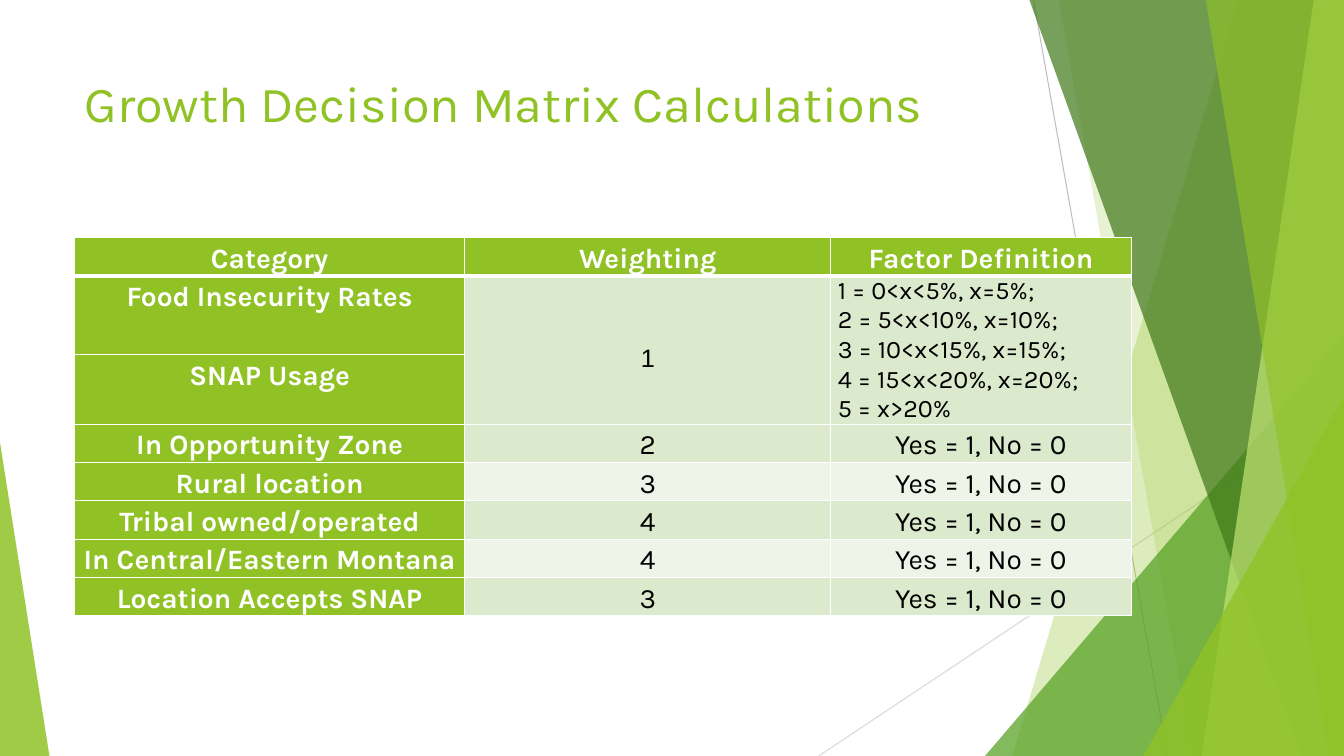
"""Build the growth decision matrix slide with its faceted green backdrop."""
from dataclasses import dataclass

from lxml import etree
from pptx import Presentation
from pptx.dml.color import RGBColor
from pptx.enum.shapes import MSO_CONNECTOR, MSO_SHAPE
from pptx.enum.text import MSO_ANCHOR, PP_ALIGN
from pptx.oxml.ns import qn
from pptx.util import Pt

PX = 9144
WIDTH, HEIGHT = 1333, 750
STRAIGHT = MSO_CONNECTOR.STRAIGHT
TRIANGLE = MSO_SHAPE.ISOSCELES_TRIANGLE
LEFT, CENTER = PP_ALIGN.LEFT, PP_ALIGN.CENTER
TOP, MIDDLE = MSO_ANCHOR.TOP, MSO_ANCHOR.MIDDLE


@dataclass(frozen=True)
class Theme:
    green: str = "90C226"
    leaf: str = "54A021"
    forest: str = "3F7819"
    lime: str = "C0E474"
    band_dark: str = "DBE9CD"
    band_light: str = "EEF4E8"
    white: str = "FFFFFF"
    black: str = "000000"
    line_dark: str = "BFBFBF"
    line_light: str = "D9D9D9"
    font: str = "Karla"
    plain_font: str = "Arial"
    title_size: int = 36
    table_size: int = 20
    detail_size: int = 18
    hairline: float = 0.75
    border: int = 1
    header_border: int = 3


THEME = Theme()


@dataclass(frozen=True)
class Ray:
    start: tuple[int, int]
    end: tuple[int, int]
    color: str


@dataclass(frozen=True)
class Facet:
    top_left: int
    bottom_left: int
    color: str
    opacity: int


@dataclass(frozen=True)
class Wedge:
    left: int
    top: int
    width: int
    apex: int
    color: str
    opacity: int


@dataclass(frozen=True)
class TextStyle:
    color: str = THEME.black
    size: int = THEME.table_size
    font: str = THEME.font
    bold: bool = False
    align: PP_ALIGN = CENTER
    spacing: float = 1.15


LABEL = TextStyle(color=THEME.white, bold=True)
VALUE = TextStyle()
SHARED_WEIGHT = TextStyle(size=THEME.detail_size, font=THEME.plain_font)
RANGES = TextStyle(size=THEME.detail_size, align=LEFT, spacing=1.0)

RAYS = [
    Ray((1025, 0), (1158, HEIGHT), THEME.line_dark),
    Ray((WIDTH, 403), (812, HEIGHT), THEME.line_light),
]
BACKDROP = [
    Facet(1228, 1004, THEME.green, 30),
    Facet(1050, 1183, THEME.green, 20),
    Wedge(977, 333, 356, 1, THEME.leaf, 72),
    Facet(1021, 1291, THEME.forest, 70),
    Facet(1303, 1192, THEME.lime, 70),
    Facet(1196, 1318, THEME.green, 65),
    Wedge(1134, 393, 199, 1, THEME.green, 80),
    Wedge(0, 439, 49, 0, THEME.green, 85),
]

TABLE_LEFT, TABLE_TOP = 74, 236
COLUMN_WIDTHS = [387, 363, 298]
ROW_HEIGHTS = [38, 78, 69] + [38] * 5
YES_NO = "Yes = 1, No = 0"
FACTOR_RANGES = """1 = 0<x<5%, x=5%;
2 = 5<x<10%, x=10%;
3 = 10<x<15%, x=15%;
4 = 15<x<20%, x=20%;
5 = x>20%"""
ROWS = [
    ("Category", "Weighting", "Factor Definition"),
    ("Food Insecurity Rates", "1", FACTOR_RANGES),
    ("SNAP Usage", "", ""),
    ("In Opportunity Zone", "2", YES_NO),
    ("Rural location", "3", YES_NO),
    ("Tribal owned/operated", "4", YES_NO),
    ("In Central/Eastern Montana", "4", YES_NO),
    ("Location Accepts SNAP", "3", YES_NO),
]


def paint(shape, color: str, opacity: int) -> None:
    """Give a shape a translucent fill and no outline or shadow."""
    shape.shadow.inherit = False
    shape.line.fill.background()
    shape.fill.solid()
    shape.fill.fore_color.rgb = RGBColor.from_string(color)
    tint = shape.element.spPr.find(".//" + qn("a:srgbClr"))
    etree.SubElement(tint, qn("a:alpha"), val=str(opacity * 1000))


def draw_ray(page, ray: Ray) -> None:
    """Draw one thin backdrop line."""
    line = page.shapes.add_connector(STRAIGHT, *(value * PX for value in ray.start + ray.end))
    line.line.color.rgb = RGBColor.from_string(ray.color)
    line.line.width = Pt(THEME.hairline)
    etree.SubElement(line.element.spPr, qn("a:effectLst"))


def draw_facet(page, facet: Facet) -> None:
    """Draw a full-height panel that reaches the right edge."""
    builder = page.shapes.build_freeform(facet.top_left, 0, scale=PX)
    builder.add_line_segments([(WIDTH, 0), (WIDTH, HEIGHT), (facet.bottom_left, HEIGHT)])
    paint(builder.convert_to_shape(), facet.color, facet.opacity)


def draw_wedge(page, wedge: Wedge) -> None:
    """Draw a triangle that stands on the bottom edge."""
    bounds = (wedge.left, wedge.top, wedge.width, HEIGHT - wedge.top)
    shape = page.shapes.add_shape(TRIANGLE, *(value * PX for value in bounds))
    shape.adjustments[0] = wedge.apex
    paint(shape, wedge.color, wedge.opacity)


def write_text(frame, text: str, style: TextStyle) -> None:
    """Write each line of the text as a styled paragraph."""
    for index, content in enumerate(text.split("\n")):
        para = frame.add_paragraph() if index else frame.paragraphs[0]
        para.alignment = style.align
        para.line_spacing = style.spacing
        span = para.add_run()
        span.text = content
        span.font.name = style.font
        span.font.size = Pt(style.size)
        span.font.bold = style.bold
        span.font.color.rgb = RGBColor.from_string(style.color)


def write_title(page) -> None:
    """Place the title in front of the backdrop."""
    title = page.shapes.title
    title.left, title.top, title.width, title.height = (value * PX for value in (74, 67, 940, 144))
    title.text_frame.vertical_anchor = TOP
    style = TextStyle(color=THEME.green, size=THEME.title_size, align=LEFT, spacing=1.0)
    write_text(title.text_frame, "Growth Decision Matrix Calculations", style)
    title.element.getparent().append(title.element)


def border_cell(cell, row: int) -> None:
    """Add white borders, thicker between the header and the body."""
    properties = cell._tc.get_or_add_tcPr()
    heavy = {(0, "lnB"), (1, "lnT")}
    for index, side in enumerate(("lnL", "lnR", "lnT", "lnB")):
        width = THEME.header_border if (row, side) in heavy else THEME.border
        edge = etree.Element(qn("a:" + side), w=str(Pt(width)))
        fill = etree.SubElement(edge, qn("a:solidFill"))
        etree.SubElement(fill, qn("a:srgbClr"), val=THEME.white)
        properties.insert(index, edge)


def draw_matrix(page) -> None:
    """Draw the weighting table."""
    bounds = (TABLE_LEFT, TABLE_TOP, sum(COLUMN_WIDTHS), sum(ROW_HEIGHTS))
    frame = page.shapes.add_table(len(ROWS), len(COLUMN_WIDTHS), *(value * PX for value in bounds))
    table = frame.table
    for column, width in zip(table.columns, COLUMN_WIDTHS):
        column.width = width * PX
    special = {(1, 1): SHARED_WEIGHT, (1, 2): RANGES}
    for row, texts in enumerate(ROWS):
        table.rows[row].height = ROW_HEIGHTS[row] * PX
        band = THEME.band_dark if row % 2 else THEME.band_light
        for column, text in enumerate(texts):
            cell = table.cell(row, column)
            is_label = row == 0 or column == 0
            cell.margin_left = cell.margin_right = 7 * PX
            cell.margin_top = cell.margin_bottom = 0
            cell.fill.solid()
            cell.fill.fore_color.rgb = RGBColor.from_string(THEME.green if is_label else band)
            border_cell(cell, row)
            if text:
                write_text(cell.text_frame, text, special.get((row, column), LABEL if is_label else VALUE))
    for column in (1, 2):
        table.cell(1, column).merge(table.cell(2, column))
    table.cell(1, 1).vertical_anchor = MIDDLE
    table.cell(1, 1).margin_top = 12 * PX


def main() -> None:
    """Create and save the deck."""
    deck = Presentation()
    deck.slide_width, deck.slide_height = WIDTH * PX, HEIGHT * PX
    page = deck.slides.add_slide(deck.slide_layouts[5])
    for ray in RAYS:
        draw_ray(page, ray)
    for piece in BACKDROP:
        draw = draw_facet if isinstance(piece, Facet) else draw_wedge
        draw(page, piece)
    write_title(page)
    draw_matrix(page)
    deck.save("out.pptx")


if __name__ == "__main__":
    main()
